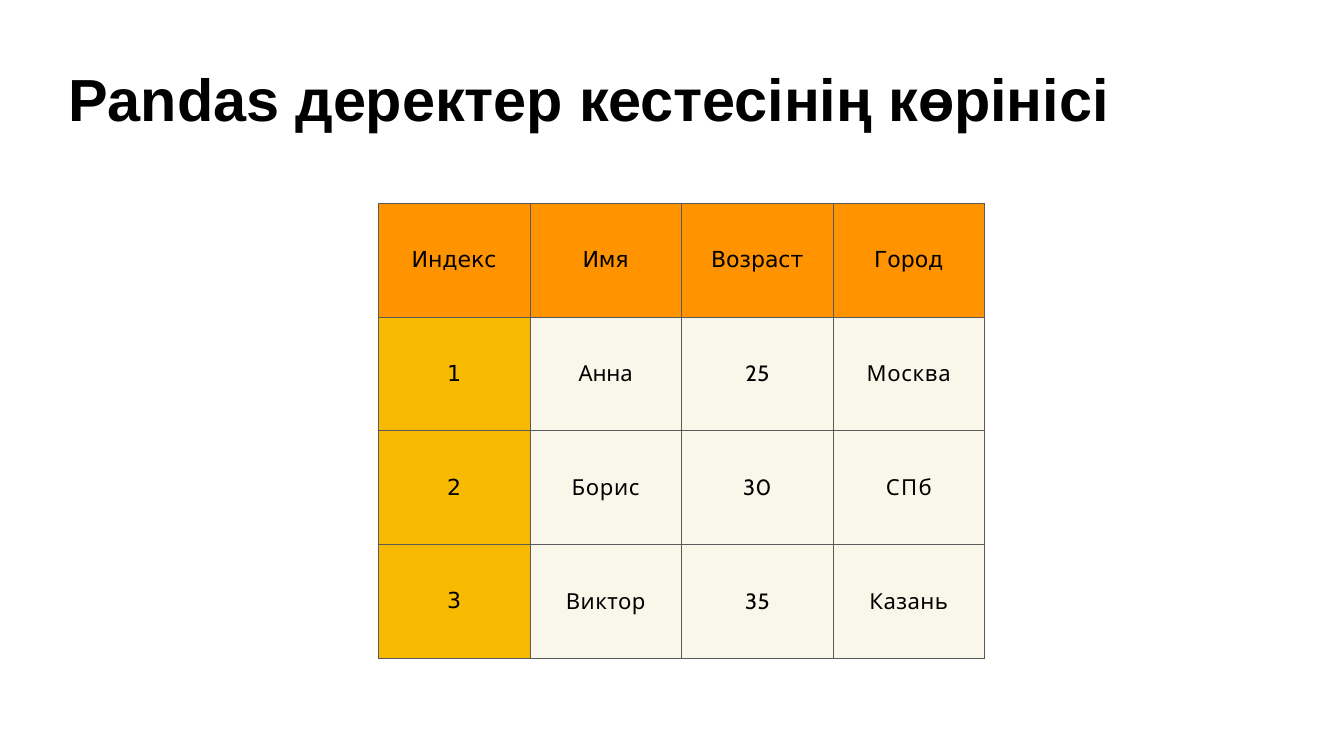
from lxml import etree
from pptx import Presentation
from pptx import util as u
from pptx.dml.color import RGBColor
from pptx.enum import text
from pptx.oxml.ns import qn

COLORS = {
    "ink": "000000",
    "border": "5B5A5A",
    "header": "FF9300",
    "index": "F8BA00",
    "body": "F9F7E9",
}

HEADERS = [("Индекс", -0.1), ("Имя", -0.2), ("Возраст", -0.1), ("Город", -0.1)]
RECORDS = [
    [("1", -0.5), ("Анна", -0.2), ("25", 0.5), ("Москва", 0.8)],
    [("2", -0.5), ("Борис", 0.8), ("30", 0.5), ("СПб", 1.6)],
    [("3", -0.5), ("Виктор", 0.5), ("35", 0.5), ("Казань", 0.5)],
]


class Deck:
    def __init__(self, width, height):
        self.prs = Presentation()
        self.prs.slide_width = u.Inches(width)
        self.prs.slide_height = u.Inches(height)
        self.s = self.prs.slides.add_slide(self.prs.slide_layouts[6])

    def label(self, box, tf, words, size, font, spacing, bold=False):
        box.margin_left = box.margin_right = box.margin_top = box.margin_bottom = 0
        box.vertical_anchor = text.MSO_ANCHOR.MIDDLE
        p = tf.paragraphs[0]
        p.font.size = u.Pt(size)
        p.font.name = font
        p.font.bold = bold
        p.font.color.rgb = RGBColor.from_string(COLORS["ink"])
        r = p.add_run()
        r.text = words
        r._r.get_or_add_rPr().set("spc", str(round(spacing * 100)))
        return p

    def title(self, words, left, top, width, height):
        sp = self.s.shapes.add_textbox(*map(u.Inches, (left, top, width, height)))
        tf = sp.text_frame
        tf.word_wrap = True
        self.label(tf, tf, words, 70, "Arial", -0.1, bold=True)

    def border(self, cell):
        tcPr = cell._tc.get_or_add_tcPr()
        for i, side in enumerate(("lnL", "lnR", "lnT", "lnB")):
            ln = etree.Element(qn("a:" + side), w=str(u.Pt(1)))
            fill = etree.SubElement(ln, qn("a:solidFill"))
            etree.SubElement(fill, qn("a:srgbClr"), val=COLORS["border"])
            tcPr.insert(i, ln)

    def cell(self, cell, words, spacing, fill, font):
        p = self.label(cell, cell.text_frame, words, 26, font, spacing)
        p.alignment = text.PP_ALIGN.CENTER
        cell.fill.solid()
        cell.fill.fore_color.rgb = RGBColor.from_string(COLORS[fill])
        self.border(cell)

    def table(self, rows, left, top, col_width, row_height):
        n, m = len(rows), len(rows[0])
        size = (left, top, m * col_width, n * row_height)
        tbl = self.s.shapes.add_table(n, m, *map(u.Inches, size)).table
        tbl.first_row = tbl.horz_banding = False
        for i, row in enumerate(rows):
            for j, (words, spacing) in enumerate(row):
                fill = "header" if i == 0 else "index" if j == 0 else "body"
                font = "Cabin" if fill == "body" else "DejaVu Sans"
                self.cell(tbl.cell(i, j), words, spacing, fill, font)


def main():
    deck = Deck(21.99, 12.37)
    deck.title("Pandas деректер кестесінің көрінісі", 1.12, 1, 19.75, 1.19)
    deck.table([HEADERS] + RECORDS, 6.19, 3.33, 2.48, 1.86)
    deck.prs.save("out.pptx")


if __name__ == "__main__":
    main()
